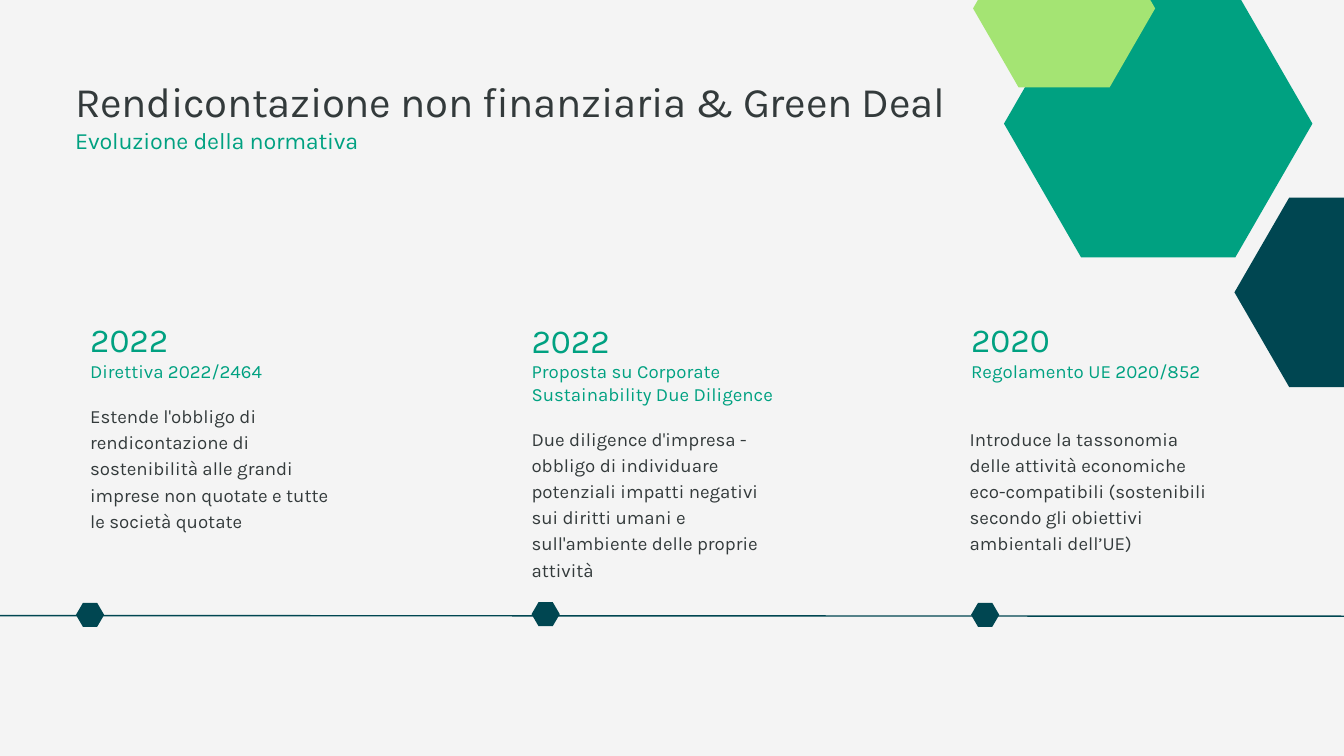
from dataclasses import dataclass

from lxml.etree import SubElement
from pptx import Presentation
from pptx.dml.color import RGBColor as RGB
from pptx.enum.shapes import MSO_CONNECTOR as Connector, MSO_SHAPE as Shape
from pptx.enum.text import MSO_AUTO_SIZE as AutoSize
from pptx.oxml.ns import qn
from pptx.util import Inches, Pt

COLUMNS, ROWS = 20, 11.25  # square grid cells across and down the slide


@dataclass(frozen=True)
class TextStyle:
    size: float
    leading: float
    color: str
    tracking: int = 0  # hundredths of a point


@dataclass(frozen=True)
class Theme:
    font: str = "Karla"
    background: str = "F4F4F4"
    petrol: str = "004651"
    green: str = "00A181"
    lime: str = "A4E473"
    ink: str = "333A3B"
    axis_width: float = 1.5

    @property
    def title(self):
        return TextStyle(45, 54, self.ink, -40)

    @property
    def subtitle(self):
        return TextStyle(25, 30, self.green, -20)

    @property
    def year(self):
        return TextStyle(36, 43.2, self.green)

    @property
    def law(self):
        return TextStyle(20, 24, self.green)

    @property
    def body(self):
        return TextStyle(20, 28, self.ink)


class SlideBuilder:
    def __init__(self, deck, theme):
        self.theme = theme
        self.cell = deck.slide_width / COLUMNS
        self.slide = deck.slides.add_slide(deck.slide_layouts[6])
        fill = self.slide.background.fill
        fill.solid()
        fill.fore_color.rgb = RGB.from_string(theme.background)

    def place(self, *cells):
        return [round(count * self.cell) for count in cells]

    def line(self, start, end, color):
        axis = self.slide.shapes.add_connector(
            Connector.STRAIGHT, *self.place(*start, *end))
        axis.line.color.rgb = RGB.from_string(color)
        axis.line.width = Pt(self.theme.axis_width)
        SubElement(axis._element.spPr, qn("a:effectLst"))

    def hexagon(self, left, top, width, height, color):
        cell = self.slide.shapes.add_shape(
            Shape.HEXAGON, *self.place(left, top, width, height))
        cell.adjustments[0] = width / height / 4  # corners a quarter in
        cell.shadow.inherit = False
        cell.fill.solid()
        cell.fill.fore_color.rgb = RGB.from_string(color)
        cell.line.fill.background()

    def text(self, left, top, width, height, *lines):
        frame = self.slide.shapes.add_textbox(
            *self.place(left, top, width, height)).text_frame
        layout = dict(margin_left=0, margin_top=0, margin_right=0,
                      margin_bottom=0, word_wrap=True,
                      auto_size=AutoSize.SHAPE_TO_FIT_TEXT)
        for name, value in layout.items():
            setattr(frame, name, value)
        for number, (words, style) in enumerate(lines):
            paragraph = frame.add_paragraph() if number else frame.paragraphs[0]
            paragraph.line_spacing = Pt(style.leading)
            run = paragraph.add_run()
            run.text = words
            for name, value in dict(name=self.theme.font,
                                    size=Pt(style.size)).items():
                setattr(run.font, name, value)
            run.font.color.rgb = RGB.from_string(style.color)
            if style.tracking:
                run._r.get_or_add_rPr().set("spc", str(style.tracking))


# Marker (left, top), heading (left, top, height), body (left, top), wording
MILESTONES = [
    ((1.13, 8.97), (1.34, 4.75, 0.93), (1.34, 5.97),
     "2022", "Direttiva 2022/2464",
     "Estende l'obbligo di rendicontazione di sostenibilità alle grandi "
     "imprese non quotate e tutte le società quotate"),
    ((7.91, 8.96), (7.91, 4.76, 1.27), (7.91, 6.31),
     "2022", "Proposta su Corporate Sustainability Due Diligence",
     "Due diligence d'impresa - obbligo di individuare potenziali impatti "
     "negativi sui diritti umani e sull'ambiente delle proprie attività"),
    ((14.45, 8.97), (14.45, 4.75, 0.93), (14.43, 6.31),
     "2020", "Regolamento UE 2020/852",
     "Introduce la tassonomia delle attività economiche eco-compatibili "
     "(sostenibili secondo gli obiettivi ambientali dell’UE)"),
]
MARKER_SIZE = 0.42, 0.36
TEXT_WIDTH, BODY_HEIGHT = 3.68, 1.91


def main():
    deck = Presentation()
    deck.slide_width, deck.slide_height = Inches(COLUMNS), Inches(ROWS)
    theme = Theme()
    page = SlideBuilder(deck, theme)

    # Timeline axis and markers
    page.line((-0.27, 9.16), (COLUMNS, 9.17), theme.petrol)
    for marker, *_ in MILESTONES:
        page.hexagon(*marker, *MARKER_SIZE, theme.petrol)

    # Corner honeycomb
    page.hexagon(18.37, 2.94, 3.26, 2.82, theme.petrol)
    page.hexagon(14.94, -0.15, 4.59, 3.98, theme.green)
    page.hexagon(14.48, -1.05, 2.71, 2.35, theme.lime)

    # Title
    page.text(1.12, 1.12, 13.06, 1.15,
              ("Rendicontazione non finanziaria & Green Deal", theme.title),
              ("Evoluzione della normativa", theme.subtitle))

    # Milestone texts
    for _, (left, top, height), body, year, law, summary in MILESTONES:
        page.text(left, top, TEXT_WIDTH, height,
                  (year, theme.year), (law, theme.law))
        page.text(*body, TEXT_WIDTH, BODY_HEIGHT, (summary, theme.body))

    deck.save("out.pptx")


if __name__ == "__main__":
    main()
